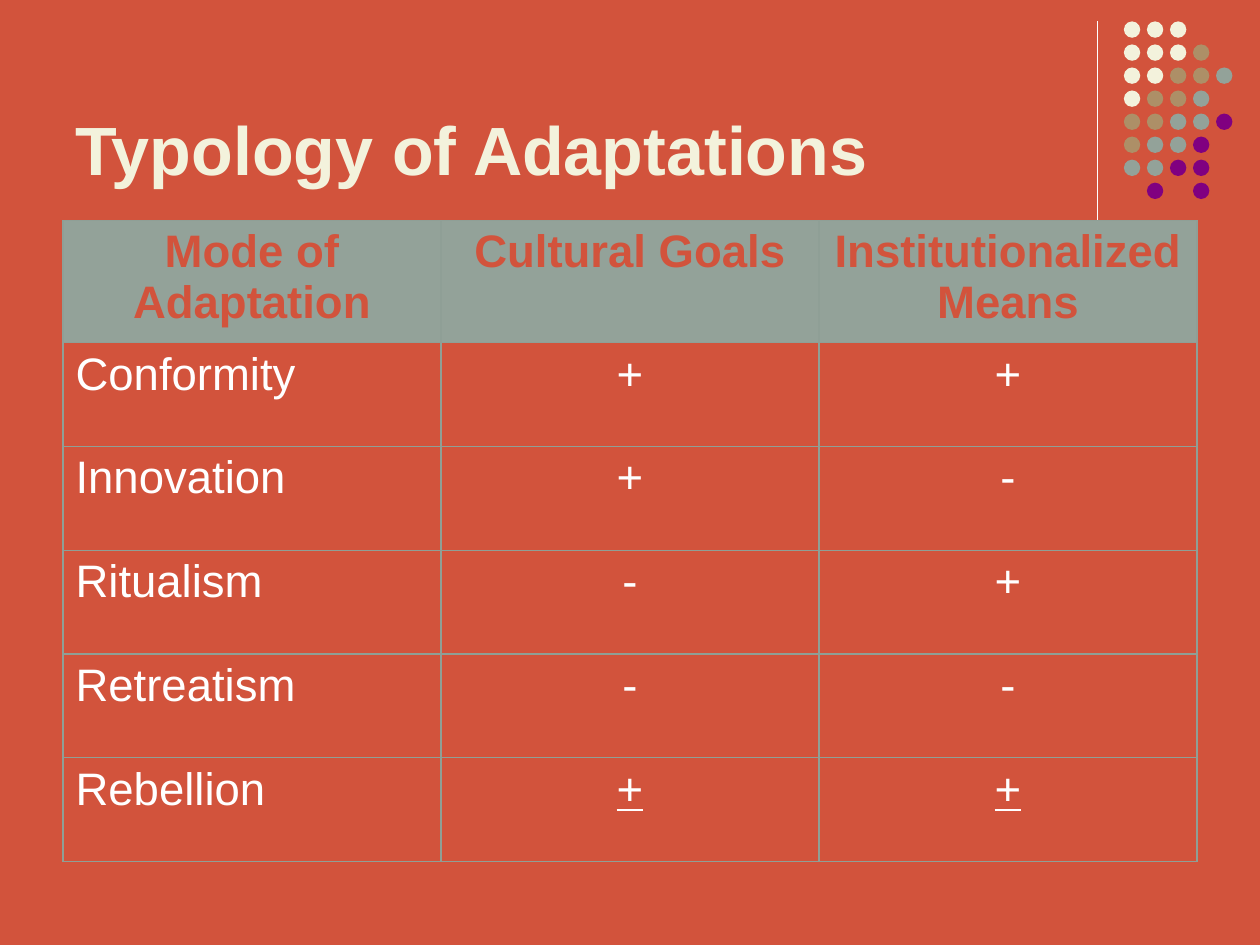
"""Build the slide with the typology of adaptations table."""
import pptx
import pptx.dml.color
import pptx.enum.shapes
import pptx.enum.text
import pptx.oxml
import pptx.oxml.ns
import pptx.util

Inches = pptx.util.Inches
Pt = pptx.util.Pt
RGB = pptx.dml.color.RGBColor.from_string
ALIGN = pptx.enum.text.PP_ALIGN
SHAPES = pptx.enum.shapes.MSO_SHAPE
NS = pptx.oxml.ns.nsdecls("a")

THEME = {
    "background": "D2533C", "cream": "F3F2DC", "tan": "AD8F67", "sage": "93A299",
    "purple": "800080", "white": "FFFFFF", "border": "8F9F96",
    "font": "Arial", "title_size": Pt(39), "table_size": Pt(26), "line": Pt(0.75),
}
TITLE = {"size": THEME["title_size"], "bold": True, "name": THEME["font"]}
HEADER = {"size": THEME["table_size"], "bold": True, "name": THEME["font"]}
BODY = {"size": THEME["table_size"], "bold": False, "name": THEME["font"]}


def write(frame, wording, color, font_values, align=ALIGN.LEFT):
    paragraph = frame.paragraphs[0]
    paragraph.alignment = align
    run = paragraph.add_run()
    run.text = wording
    run.font.color.rgb = RGB(THEME[color])
    for attribute, setting in font_values.items():
        setattr(run.font, attribute, setting)


def outline(cell):
    properties = cell._tc.get_or_add_tcPr()
    for side in ("lnL", "lnR", "lnT", "lnB"):
        properties.append(pptx.oxml.parse_xml(
            f'<a:{side} {NS} w="{THEME["line"]}"><a:solidFill>'
            f'<a:srgbClr val="{THEME["border"]}"/></a:solidFill></a:{side}>'))


deck = pptx.Presentation()
deck.slide_width, deck.slide_height = Inches(10), Inches(7.5)
slide = deck.slides.add_slide(deck.slide_layouts[6])
slide.background.fill.solid()
slide.background.fill.fore_color.rgb = RGB(THEME["background"])

divider = slide.shapes.add_connector(
    pptx.enum.shapes.MSO_CONNECTOR.STRAIGHT,
    Inches(8.71), Inches(0.17), Inches(8.71), Inches(1.83))
divider.line.color.rgb = RGB(THEME["white"])
divider.line.width = THEME["line"]
divider._element.spPr.append(pptx.oxml.parse_xml(f"<a:effectLst {NS}/>"))

dot_colors = {"c": "cream", "t": "tan", "s": "sage", "p": "purple"}
dot_rows = ["ccc", "ccct", "cctts", "ctts", "ttssp", "tssp", "sspp", ".p.p"]
dot_pitch = 1.28 / 7
for row, codes in enumerate(dot_rows):
    for column, code in enumerate(codes):
        if code in dot_colors:
            dot = slide.shapes.add_shape(
                SHAPES.OVAL, Inches(8.92 + column * dot_pitch),
                Inches(0.17 + row * dot_pitch), Inches(0.13), Inches(0.13))
            dot.shadow.inherit = False
            dot.fill.solid()
            dot.fill.fore_color.rgb = RGB(THEME[dot_colors[code]])
            dot.line.fill.background()

title = slide.shapes.add_textbox(Inches(0.5), Inches(0.13), Inches(8.25), Inches(1.42))
title.text_frame.word_wrap = True
title.text_frame.vertical_anchor = pptx.enum.text.MSO_ANCHOR.BOTTOM
write(title.text_frame, "Typology of Adaptations", "cream", TITLE)

headings = ["Mode of Adaptation", "Cultural Goals", "Institutionalized Means"]
adaptations = [
    ("Conformity", "+", "+"),
    ("Innovation", "+", "-"),
    ("Ritualism", "-", "+"),
    ("Retreatism", "-", "-"),
    ("Rebellion", "+", "+"),
]
header_height, table_height = 0.97, 5.09
typology = slide.shapes.add_table(
    len(adaptations) + 1, len(headings),
    Inches(0.5), Inches(1.75), Inches(9), Inches(table_height)).table
typology.horz_banding = False
typology.rows[0].height = Inches(header_height)
for row in range(1, len(adaptations) + 1):
    typology.rows[row].height = Inches((table_height - header_height) / len(adaptations))

for column, heading in enumerate(headings):
    cell = typology.cell(0, column)
    outline(cell)
    cell.fill.solid()
    cell.fill.fore_color.rgb = RGB(THEME["sage"])
    write(cell.text_frame, heading, "background", HEADER, ALIGN.CENTER)

for row, adaptation in enumerate(adaptations, start=1):
    for column, entry in enumerate(adaptation):
        cell = typology.cell(row, column)
        outline(cell)
        cell.fill.background()
        underlined = adaptation[0] == "Rebellion" and column > 0
        write(cell.text_frame, entry, "white", {**BODY, "underline": underlined},
              ALIGN.CENTER if column else ALIGN.LEFT)

deck.save("out.pptx")
